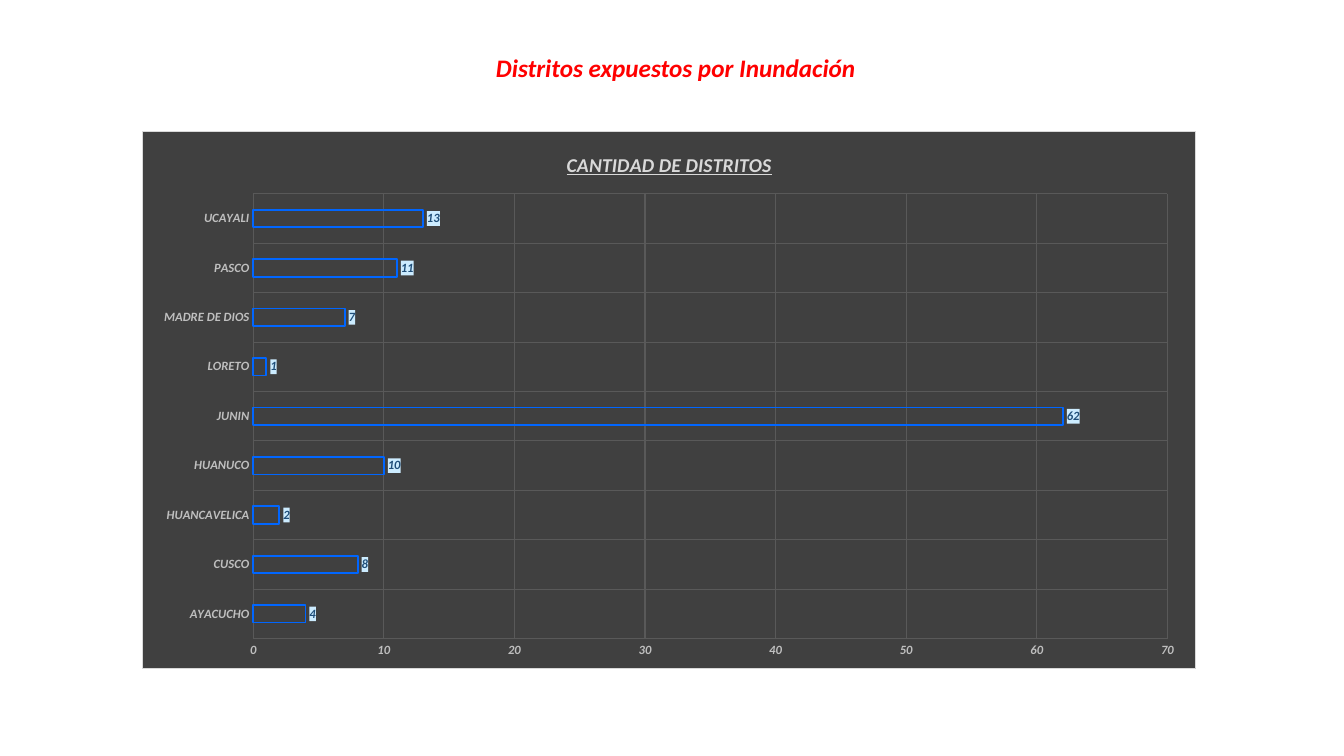
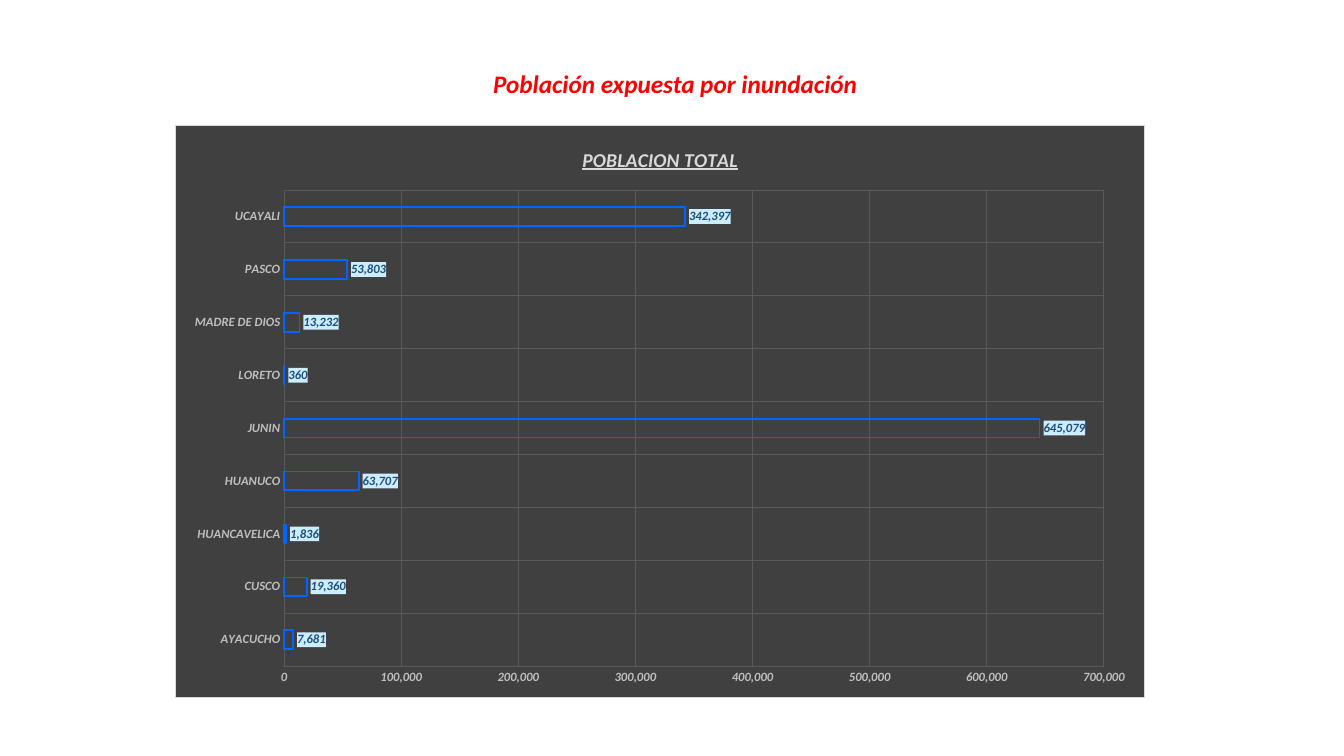
from lxml import etree
from pptx import Presentation
from pptx.chart.data import CategoryChartData
from pptx.dml.color import RGBColor
from pptx.enum import chart as ch, text
from pptx.oxml import ns, parse_xml
from pptx.util import Pt

FONT = "Calibri"
RED, BLUE, NAVY, PALE = "FF0000", "0066FF", "1F4E79", "CCECFF"
PANEL, GRID, AXIS, LIGHT = "404040", "595959", "BFBFBF", "D9D9D9"

REGIONS = ["AYACUCHO", "CUSCO", "HUANCAVELICA", "HUANUCO", "JUNIN",
           "LORETO", "MADRE DE DIOS", "PASCO", "UCAYALI"]

# title box, chart box and plot area (fractions of the chart): left, top, width, height
SLIDES = [
    dict(title="Distritos expuestos por Inundación", title_box=(345.6, 33.8, 274.3, 28.8),
         heading="CANTIDAD DE DISTRITOS", chart_box=(101.5, 93.6, 753.1, 384.5),
         plot=(0.105, 0.116, 0.868, 0.828), top=70,
         values=[4, 8, 2, 10, 62, 1, 7, 11, 13]),
    dict(title="Población expuesta por inundación", title_box=(343.4, 45.4, 277.9, 28.8),
         heading="POBLACION TOTAL", chart_box=(125, 89.3, 693, 409),
         plot=(0.112, 0.113, 0.846, 0.833), top=700000,
         values=[7681, 19360, 1836, 63707, 645079, 360, 13232, 53803, 342397]),
]


def style(font, size, color):
    font.name, font.size, font.bold, font.italic = FONT, Pt(size), True, True
    font.color.rgb = RGBColor.from_string(color)


def box_format(fill, line=None):
    """Return a c:spPr element with a solid fill and an optional thin border."""
    solid = '<a:solidFill><a:srgbClr val="%s"/></a:solidFill>'
    border = f'<a:ln w="9525">{solid % line}</a:ln>' if line else ""
    return parse_xml(f'<c:spPr {ns.nsdecls("c", "a")}>{solid % fill}{border}</c:spPr>')


prs = Presentation()
prs.slide_width, prs.slide_height = Pt(960), Pt(540)

for spec_row in SLIDES:
    s = prs.slides.add_slide(prs.slide_layouts[5])

    title = s.shapes.title
    title.left, title.top, title.width, title.height = map(Pt, spec_row["title_box"])
    tf = title.text_frame
    tf.word_wrap = False
    tf.auto_size = text.MSO_AUTO_SIZE.SHAPE_TO_FIT_TEXT
    tf.vertical_anchor = text.MSO_ANCHOR.TOP
    p = tf.paragraphs[0]
    p.alignment = text.PP_ALIGN.CENTER
    r = p.add_run()
    r.text = spec_row["title"]
    style(r.font, 18, RED)

    data = CategoryChartData(number_format="#,##0")
    data.categories = REGIONS
    data.add_series(spec_row["heading"], spec_row["values"])
    chart = s.shapes.add_chart(ch.XL_CHART_TYPE.BAR_CLUSTERED,
                               *map(Pt, spec_row["chart_box"]), data).chart
    chart.font.name, chart.font.size = FONT, Pt(10)
    chart.has_legend = False
    chart.has_title = True
    r = chart.chart_title.text_frame.paragraphs[0].add_run()
    r.text = spec_row["heading"]
    style(r.font, 14, LIGHT)
    r.font.underline = True
    chart.chart_title.include_in_layout = False

    for axis in (chart.category_axis, chart.value_axis):
        axis.major_tick_mark = axis.minor_tick_mark = ch.XL_TICK_MARK.NONE
        axis.format.line.fill.background()
        axis.has_major_gridlines = True
        line = axis.major_gridlines.format.line
        line.width = Pt(0.75)
        line.color.rgb = RGBColor.from_string(GRID)
        style(axis.tick_labels.font, 9, AXIS)
    axis.minimum_scale, axis.maximum_scale = 0, spec_row["top"]
    axis.major_unit = spec_row["top"] / 7
    axis.tick_labels.number_format = "#,##0"
    axis.tick_labels.number_format_is_linked = False

    plot = chart.plots[0]
    plot.gap_width, plot.overlap, plot.vary_by_categories = 182, -50, False
    bars = plot.series[0]
    bars.format.fill.background()
    bars.format.line.width = Pt(1.25)
    bars.format.line.color.rgb = RGBColor.from_string(BLUE)
    labels = bars.data_labels
    labels.show_value = True
    labels.position = ch.XL_LABEL_POSITION.OUTSIDE_END
    labels.number_format, labels.number_format_is_linked = "#,##0", False
    style(labels.font, 9, NAVY)

    # Label and panel fills, and the plot position, need XML
    root = chart.element
    root.find(".//" + ns.qn("c:dLbls")).find(ns.qn("c:txPr")).addprevious(box_format(PALE))
    root.find(ns.qn("c:chart")).addnext(box_format(PANEL, LIGHT))
    area = root.find(".//" + ns.qn("c:plotArea"))
    for old in area.findall(ns.qn("c:layout")):
        area.remove(old)
    layout = etree.Element(ns.qn("c:layout"))
    manual = etree.SubElement(layout, ns.qn("c:manualLayout"))
    settings = [("layoutTarget", "inner"), ("xMode", "edge"), ("yMode", "edge")]
    for tag, value in settings + list(zip("xywh", spec_row["plot"])):
        etree.SubElement(manual, ns.qn("c:" + tag)).set("val", str(value))
    area.insert(0, layout)

prs.save("out.pptx")
